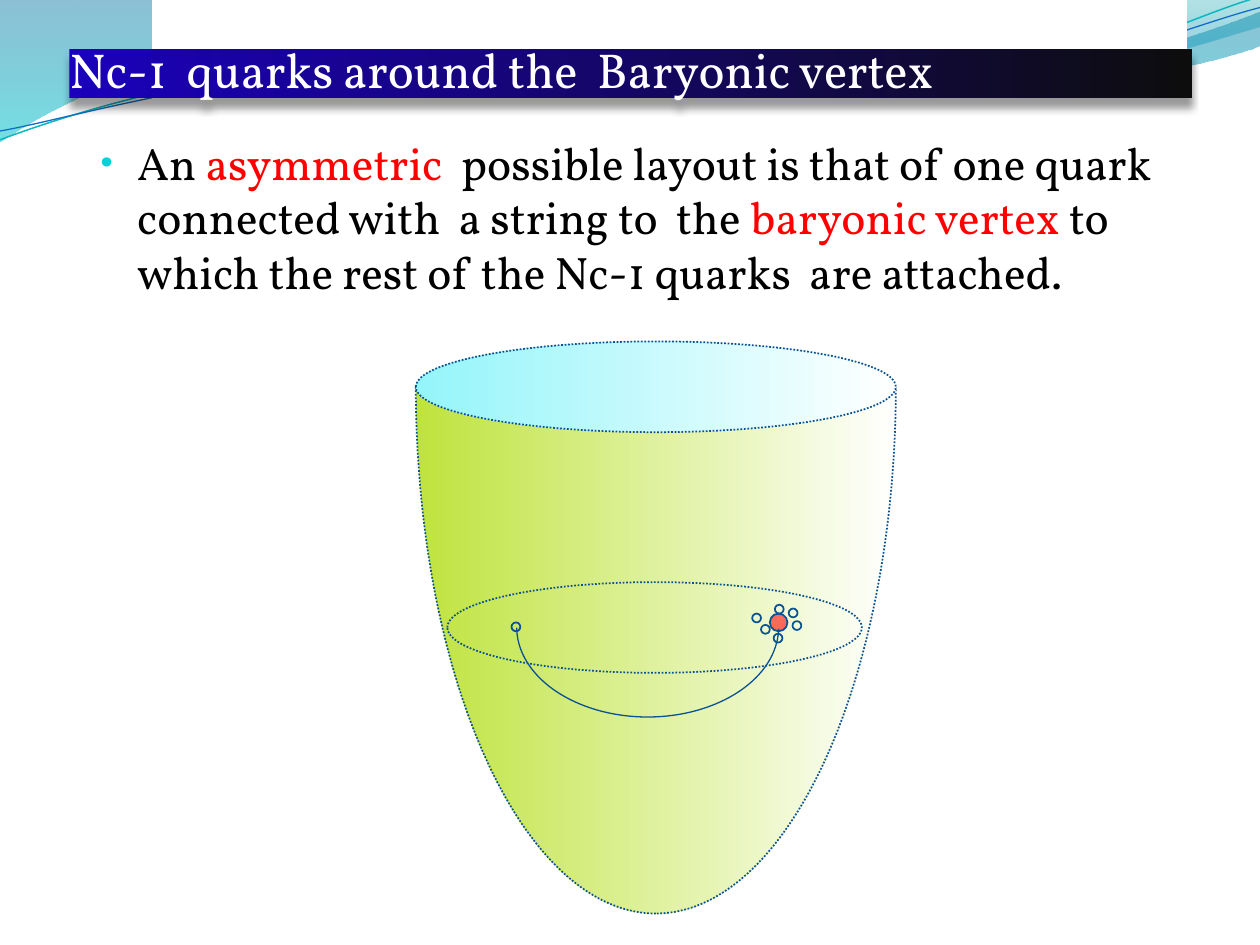
from lxml import etree
from pptx import Presentation
from pptx import util as u
from pptx.dml.color import RGBColor
from pptx.enum import dml, shapes, text
from pptx.oxml.ns import qn

FONT = "Vollkorn"
COLORS = {
    "white": "FFFFFF", "black": "000000", "red": "FF0000",
    "outline": "0B5292", "string": "095295", "bullet": "0BD0D9",
    "green": "BFE33D", "sky": "94F5FA",
    "title_from": "1B00BC", "title_to": "0D0D0D",
    "wave_blue": "0074A1", "wave_cyan": "00C6CF",
    "crest_teal": "00A1A9", "crest_blue": "008BBF",
    "teal_line": "0AB8BF", "blue_line": "0F6FC6",
}

# Header waves: groups of one point (start or line) or three (curve)
WAVE = [[(0, 0)], [(4.4, -0.01)],
        [(4.76, 0.17), (6.64, 0.63), (7.58, 0.63)],
        [(8.53, 0.63), (9.58, 0.26), (10, 0.09)], [(10.01, 0.36)],
        [(9.83, 0.44), (8.7, 0.76), (7.46, 0.75)],
        [(6.22, 0.75), (3.82, 0.28), (2.57, 0.34)],
        [(1.29, 0.36), (0.46, 0.83), (-0.01, 1.13)], [(0, 0)]]
CREST = [[(4.79, -0.01)], [(5.09, 0.11), (6.82, 0.62), (7.69, 0.65)],
         [(8.56, 0.69), (9.61, 0.32), (10, 0.21)], [(10, 0)], [(4.79, -0.01)]]
TEAL_CURVE = [[(0, 1.11)], [(0.48, 0.93), (1.58, 0.57), (2.77, 0.52)],
              [(3.95, 0.47), (5.93, 0.89), (7.13, 0.8)],
              [(8.33, 0.71), (9.38, 0.15), (9.98, -0.02)]]
BLUE_CURVE = [[(0, 1.04)], [(0.47, 0.96), (1.64, 0.61), (2.83, 0.56)],
              [(4.03, 0.51), (5.97, 0.84), (7.17, 0.75)],
              [(8.36, 0.67), (9.41, 0.21), (10, 0.06)]]

# Left and top of each small quark circle
QUARKS = [(4.06, 4.94), (5.97, 4.87), (6.15, 4.8), (6.26, 4.83),
          (6.29, 4.93), (6.14, 5.03), (6.04, 4.96)]


def rgb(name):
    return RGBColor.from_string(COLORS[name])


def set_alpha(sp, *percents):
    """Set the opacity of the fill colours, in order."""
    for clr, percent in zip(sp._element.spPr.iter(qn("a:srgbClr")), percents):
        etree.SubElement(clr, qn("a:alpha"), val=str(percent * 1000))


def fill_solid(sp, color):
    sp.fill.solid()
    sp.fill.fore_color.rgb = rgb(color)


def fill_gradient(sp, start, end, clockwise=0, stop=1.0):
    sp.fill.gradient()
    sp.fill.gradient_angle = -clockwise % 360
    for gs, color, pos in zip(sp.fill.gradient_stops, (start, end), (0, stop)):
        gs.color.rgb = rgb(color)
        gs.position = pos


def set_line(sp, color, width=1, dotted=False):
    sp.line.color.rgb = rgb(color)
    sp.line.width = u.Pt(width)
    if dotted:
        sp.line.dash_style = dml.MSO_LINE.ROUND_DOT


def add_shape(s, kind, x, y, w, h):
    sp = s.shapes.add_shape(kind, *map(u.Inches, (x, y, w, h)))
    sp.shadow.inherit = False
    sp.fill.background()
    return sp


def add_ellipse(s, x, y, w, h, dotted=False):
    sp = add_shape(s, shapes.MSO_SHAPE.OVAL, x, y, w, h)
    set_line(sp, "outline", dotted=dotted)
    return sp


def add_outline(s, outline, close):
    """Build a freeform through the end points, then bend its curved segments."""
    nodes = [tuple(map(u.Inches, segment[-1])) for segment in outline]
    builder = s.shapes.build_freeform(*nodes[0])
    builder.add_line_segments(nodes[1:], close=close)
    sp = builder.convert_to_shape()
    sp.shadow.inherit = False
    sp.fill.background()
    lines = list(sp._element.spPr.iter(qn("a:lnTo")))
    for line, segment in zip(lines, outline[1:]):
        if len(segment) == 3:
            line.tag = qn("a:cubicBezTo")
            for i, (x, y) in enumerate(segment[:2]):
                pt = etree.Element(qn("a:pt"), x=str(u.Inches(x) - sp.left),
                                   y=str(u.Inches(y) - sp.top))
                line.insert(i, pt)
    return sp


def add_header_waves(s):
    sp = add_outline(s, WAVE, True)
    fill_gradient(sp, "wave_blue", "wave_cyan", 90)
    set_alpha(sp, 45, 55)
    sp.line.fill.background()
    sp = add_outline(s, CREST, True)
    fill_gradient(sp, "crest_teal", "crest_blue", 90, 0.8)
    set_alpha(sp, 30, 45)
    sp.line.fill.background()
    set_line(add_outline(s, TEAL_CURVE, False), "teal_line", 0.85)
    set_line(add_outline(s, BLUE_CURVE, False), "blue_line", 0.75)


def add_bowl(s):
    body = add_ellipse(s, 1.02, 1.16, 8.37, 3.81, dotted=True)
    body.rotation = 270
    fill_gradient(body, "green", "white", 90)
    # White cover hides the upper half of the body
    cover = add_shape(s, shapes.MSO_SHAPE.RECTANGLE, 1.22, -2.08, 8.19, 5.14)
    fill_solid(cover, "white")
    set_line(cover, "white", 2)
    add_ellipse(s, 3.55, 4.62, 3.29, 0.72, dotted=True)
    rim = add_ellipse(s, 3.3, 2.71, 3.81, 0.72, dotted=True)
    fill_gradient(rim, "sky", "white")


def add_run(p, words, color, size):
    r = p.add_run()
    r.text = words
    r.font.name = FONT
    r.font.size = u.Pt(size)
    r.font.color.rgb = rgb(color)


def add_title(s):
    sp = s.shapes.title
    s.shapes._spTree.append(sp._element)  # bring in front of the waves
    sp.left, sp.top, sp.width, sp.height = map(u.Inches, (0.55, 0.39, 8.91, 0.39))
    fill_gradient(sp, "title_from", "title_to")
    effects = etree.SubElement(sp._element.spPr, qn("a:effectLst"))
    shadow = etree.SubElement(effects, qn("a:outerShdw"), blurRad=str(u.Pt(4)),
                              dist=str(u.Pt(5)), dir="5400000", rotWithShape="0")
    clr = etree.SubElement(shadow, qn("a:srgbClr"), val=COLORS["black"])
    etree.SubElement(clr, qn("a:alpha"), val="40000")
    tf = sp.text_frame
    tf.auto_size = text.MSO_AUTO_SIZE.NONE
    tf.vertical_anchor = text.MSO_ANCHOR.BOTTOM
    tf.margin_left = tf.margin_right = tf.margin_bottom = 0
    tf.margin_top = u.Inches(0.05)
    p = tf.paragraphs[0]
    p.alignment = text.PP_ALIGN.LEFT
    add_run(p, "Nc-1  quarks around the  Baryonic vertex", "white", 28)


def add_body(s):
    box = s.shapes.add_textbox(*map(u.Inches, (0.69, 1.02, 8.61, 6.33)))
    tf = box.text_frame
    tf.word_wrap = True
    p = tf.paragraphs[0]
    pPr = p._p.get_or_add_pPr()
    pPr.set("marL", str(u.Inches(0.3)))
    pPr.set("indent", str(u.Inches(-0.3)))
    clr = etree.SubElement(pPr, qn("a:buClr"))
    etree.SubElement(clr, qn("a:srgbClr"), val=COLORS["bullet"])
    etree.SubElement(pPr, qn("a:buSzPct"), val="95000")
    etree.SubElement(pPr, qn("a:buFont"), typeface=FONT)
    etree.SubElement(pPr, qn("a:buChar"), char="•")
    for words, color in [
        ("An ", "black"), ("asymmetric", "red"),
        ("  possible layout is that of one quark connected with  a string to  the ", "black"),
        ("baryonic vertex", "red"),
        (" to  which the rest of the Nc-1 quarks  are attached.", "black"),
    ]:
        add_run(p, words, color, 26)


def add_baryon(s):
    vertex = add_ellipse(s, 6.11, 4.87, 0.14, 0.14)
    fill_solid(vertex, "red")
    set_alpha(vertex, 57)
    string = add_shape(s, shapes.MSO_SHAPE.ARC, 4.1, 4.26, 2.08, 1.43)
    string.rotation = 180
    string.adjustments[0] = 108.54
    string.adjustments[1] = 215.83
    set_line(string, "string", 0.75)
    for x, y in QUARKS:
        add_ellipse(s, x, y, 0.07, 0.07)


def main():
    prs = Presentation()
    prs.slide_width, prs.slide_height = u.Inches(10), u.Inches(7.5)
    s = prs.slides.add_slide(prs.slide_layouts[5])
    add_header_waves(s)
    add_bowl(s)
    add_title(s)
    add_body(s)
    add_baryon(s)
    prs.save("out.pptx")


if __name__ == "__main__":
    main()
